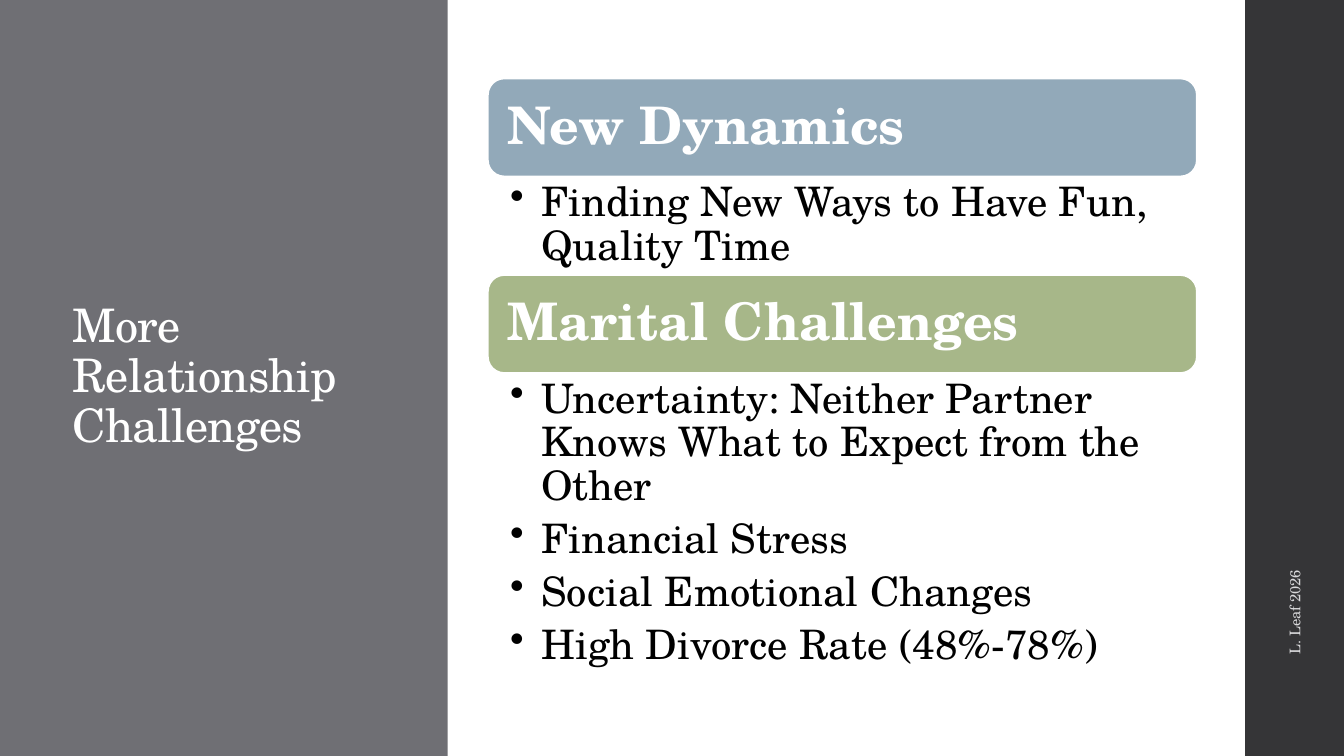
import dataclasses

import pptx
import pptx.dml.color
import pptx.enum.shapes
import pptx.enum.text
import pptx.oxml
import pptx.util

Inches = pptx.util.Inches
Pt = pptx.util.Pt
SHAPES = pptx.enum.shapes.MSO_SHAPE
ANCHOR = pptx.enum.text.MSO_ANCHOR
ALIGN = pptx.enum.text.PP_ALIGN


@dataclasses.dataclass(frozen=True)
class Theme:
    """Colours, font and type sizes of the deck."""
    font: str = "TeX Gyre Schola"
    panel: str = "6F6F74"
    strip: str = "353537"
    blue: str = "92A9B9"
    green: str = "A7B789"
    white: str = "FFFFFF"
    black: str = "000000"
    credit: str = "D9D9DB"
    title_size: float = 33
    heading_size: float = 37
    bullet_size: float = 29
    credit_size: float = 10.5


THEME = Theme()
SECTIONS = [
    ("New Dynamics", THEME.blue, 0.98,
     ["Finding New Ways to Have Fun, Quality Time"]),
    ("Marital Challenges", THEME.green, 3.02,
     ["Uncertainty: Neither Partner Knows What to Expect from the Other",
      "Financial Stress",
      "Social Emotional Changes",
      "High Divorce Rate (48%-78%)"]),
]


def rgb(color):
    """Turn a hex string into a colour."""
    return pptx.dml.color.RGBColor.from_string(color)


def add_block(slide, shape, box, color):
    """Add a filled shape without outline or shadow."""
    sp = slide.shapes.add_shape(shape, *map(Inches, box))
    sp.shadow.inherit = False
    sp.fill.solid()
    sp.fill.fore_color.rgb = rgb(color)
    sp.line.fill.background()
    return sp


def style(p, size, color, bold=False, line_spacing=0.9):
    """Format a paragraph and its runs."""
    p.alignment = ALIGN.LEFT
    p.line_spacing = line_spacing
    for r in p.runs:
        r.font.name = THEME.font
        r.font.size = Pt(size)
        r.font.bold = bold
        r.font.color.rgb = rgb(color)


def add_bullet(p):
    """Give a paragraph a round bullet with a hanging indent."""
    pPr = p._p.get_or_add_pPr()
    pPr.set("marL", str(Inches(0.31)))
    pPr.set("indent", str(-Inches(0.31)))
    pPr.append(pptx.oxml.parse_xml(
        '<a:buChar xmlns:a="http://schemas.openxmlformats.org/drawingml/2006/main" char="•"/>'))


def add_title_panel(slide, box, text):
    """Fill the left panel and place the title on it."""
    left, top, width, height = box
    panel = add_block(slide, SHAPES.RECTANGLE, box, THEME.panel)
    title = slide.shapes.title
    panel._element.addnext(title._element)
    title.left, title.top = Inches(left + 0.62), Inches(top + 0.91)
    title.width, title.height = Inches(width - 1.47), Inches(height - 1.83)
    tf = title.text_frame
    tf.text = text
    tf.word_wrap = True
    tf.auto_size = pptx.enum.text.MSO_AUTO_SIZE.NONE
    tf.vertical_anchor = ANCHOR.MIDDLE
    p = tf.paragraphs[0]
    style(p, THEME.title_size, THEME.white)
    p.runs[0]._r.get_or_add_rPr().set("spc", "-50")


def add_heading(slide, box, text, color):
    """Add a rounded heading bar."""
    sp = add_block(slide, SHAPES.ROUNDED_RECTANGLE, box, color)
    sp.line.color.rgb = rgb(THEME.white)
    sp.line.width = Pt(1.1)
    tf = sp.text_frame
    tf.text = text
    tf.word_wrap = True
    tf.margin_left = tf.margin_right = Inches(0.15)
    tf.vertical_anchor = ANCHOR.MIDDLE
    style(tf.paragraphs[0], THEME.heading_size, THEME.white, bold=True)


def add_bullets(slide, box, items):
    """Add a bulleted list."""
    tf = slide.shapes.add_textbox(*map(Inches, box)).text_frame
    tf.word_wrap = True
    tf.margin_left, tf.margin_right = Inches(0.22), Inches(0.29)
    tf.text = "\n".join(items)
    for p in tf.paragraphs:
        add_bullet(p)
        style(p, THEME.bullet_size, THEME.black)
        p.space_after = Pt(6.4)


def add_sections(slide, box, sections):
    """Stack headings and their lists from the top of the box."""
    left, top, width, _ = box
    bar = 0.97
    for heading, color, list_height, items in sections:
        add_heading(slide, (left, top, width, bar), heading, color)
        add_bullets(slide, (left, top + bar, width, list_height), items)
        top += bar + list_height


def add_credit_strip(slide, box, text):
    """Fill the right strip and run the credit upwards along it."""
    left, top, width, height = box
    add_block(slide, SHAPES.RECTANGLE, box, THEME.strip)
    length, depth = 3.92, 0.4
    sp = slide.shapes.add_textbox(
        Inches(left + width / 2 - length / 2), Inches(top + 4.43),
        Inches(length), Inches(depth))
    sp.rotation = 270
    tf = sp.text_frame
    tf.text = text
    tf.word_wrap = True
    tf.vertical_anchor = ANCHOR.MIDDLE
    style(tf.paragraphs[0], THEME.credit_size, THEME.credit, line_spacing=1.0)


def main():
    """Build and save the slide."""
    prs = pptx.Presentation()
    prs.slide_width, prs.slide_height = Inches(13.33), Inches(7.5)
    slide = prs.slides.add_slide(prs.slide_layouts.get_by_name("Title Only"))
    add_title_panel(slide, (0, 0, 4.44, 7.5), "More Relationship Challenges")
    add_credit_strip(slide, (12.35, 0, 0.98, 7.5), "L. Leaf 2026")
    add_sections(slide, (4.84, 0.78, 7.03, 5.95), SECTIONS)
    prs.save("out.pptx")


if __name__ == "__main__":
    main()
